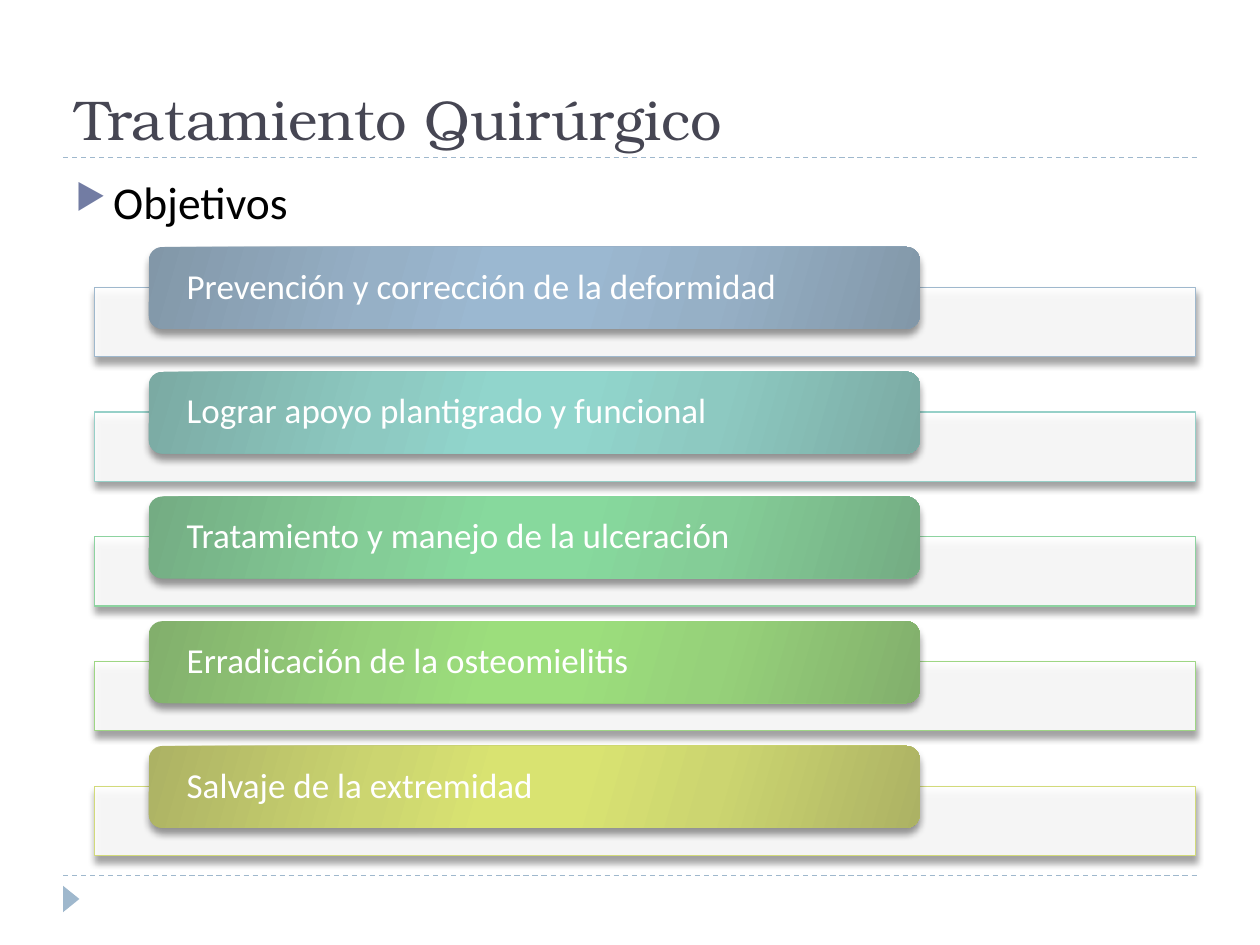
from lxml import etree
from pptx import Presentation
from pptx import util as u
from pptx.dml.color import RGBColor
from pptx.enum import dml, shapes, text
from pptx.oxml.ns import qn

# Content: goal, line colour, gradient edge, mid and core colours
TITLE = "Tratamiento Quirúrgico"
HEAD = "Objetivos"
GOALS = [
    ("Prevención y corrección de la deformidad", "9FB8CD", "8297A8", "96B0C6", "9BB8D1"),
    ("Lograr apoyo plantigrado y funcional", "96D0C8", "7BAAA3", "8DC9C1", "91D5CC"),
    ("Tratamiento y manejo de la ulceración", "8DD3A0", "74AC83", "84CD97", "87D99D"),
    ("Erradicación de la osteomielitis", "9ED684", "82AF6C", "96D17A", "9CDE7C"),
    ("Salvaje de la extremidad", "D2DA7A", "ACB264", "CCD570", "D9E371"),
]
THEME = {
    "serif": "TeX Gyre Bonum", "sans": "Calibri",
    "title": "464653", "body": "000000", "light": "FFFFFF",
    "accent": "9FB8CD", "bullet": "727CA3", "shadow": "000000",
    "title_size": 32, "head_size": 26, "goal_size": 20, "line": 0.75,
}
KIND = shapes.MSO_SHAPE
ANCHOR = text.MSO_ANCHOR


def rgb(color):
    return RGBColor.from_string(color)


def sub(node, tag, **attrs):
    return etree.SubElement(node, qn("a:" + tag), {k: str(v) for k, v in attrs.items()})


def add_run(para, words, font, size, color):
    run = para.add_run()
    run.text = words
    run.font.name = font
    run.font.size = u.Pt(size)
    run.font.color.rgb = rgb(color)


def add_box(slide, box, words, font, size, color, anchor):
    frame = slide.shapes.add_textbox(*map(u.Inches, box)).text_frame
    frame.word_wrap = True
    frame.vertical_anchor = anchor
    para = frame.paragraphs[0]
    add_run(para, words, font, size, color)
    return para


def add_form(slide, kind, box):
    form = slide.shapes.add_shape(kind, *map(u.Inches, box))
    form.shadow.inherit = False
    form.line.fill.background()
    return form


def add_rule(slide, y):
    rule = slide.shapes.add_connector(
        shapes.MSO_CONNECTOR.STRAIGHT,
        u.Inches(0.5), u.Inches(y), u.Inches(9.5), u.Inches(y))
    rule.line.color.rgb = rgb(THEME["accent"])
    rule.line.width = u.Pt(THEME["line"])
    rule.line.dash_style = dml.MSO_LINE.DASH
    sub(rule._element.spPr, "effectLst")


def add_shadow(form):
    effects = form._element.spPr.find(qn("a:effectLst"))
    shade = sub(effects, "outerShdw", blurRad=u.Pt(4), dist=u.Pt(3.4),
                dir=90 * 60000, rotWithShape=0)
    sub(sub(shade, "srgbClr", val=THEME["shadow"]), "alpha", val=40000)


def add_blend(form, edge, mid, core):
    form.fill.gradient()
    form.fill.gradient_angle = 360 - 16
    stops = form._element.spPr.find(".//" + qn("a:gsLst"))
    stops.clear()
    for pos, color in zip((0, 30, 45, 55, 73, 100), (edge, mid, core, core, mid, edge)):
        sub(sub(stops, "gs", pos=pos * 1000), "srgbClr", val=color)


def add_goal(slide, top, words, line, *blend):
    # Bar behind
    bar = add_form(slide, KIND.RECTANGLE, (0.75, top + 0.32, 8.74, 0.55))
    bar.fill.solid()
    bar.fill.fore_color.rgb = rgb(THEME["light"])
    sub(bar._element.spPr.find(".//" + qn("a:srgbClr")), "alpha", val=90000)
    bar.line.color.rgb = rgb(line)
    bar.line.width = u.Pt(THEME["line"])
    add_shadow(bar)
    # Label in front
    label = add_form(slide, KIND.ROUNDED_RECTANGLE, (1.18, top, 6.12, 0.65))
    add_blend(label, *blend)
    add_shadow(label)
    frame = label.text_frame
    frame.word_wrap = True
    frame.vertical_anchor = ANCHOR.MIDDLE
    frame.margin_left = frame.margin_right = u.Inches(0.27)
    frame.margin_top = frame.margin_bottom = 0
    para = frame.paragraphs[0]
    para.alignment = text.PP_ALIGN.LEFT
    para.line_spacing = 0.9
    add_run(para, words, THEME["sans"], THEME["goal_size"], THEME["light"])


def main():
    deck = Presentation()
    deck.slide_width, deck.slide_height = u.Inches(10), u.Inches(7.5)
    slide = deck.slides.add_slide(deck.slide_layouts[6])

    # Rules and corner mark
    for y in (6.95, 1.25):
        add_rule(slide, y)
    mark = add_form(slide, KIND.ISOSCELES_TRIANGLE, (0.46, 7.07, 0.21, 0.13))
    mark.rotation = 90
    mark.fill.solid()
    mark.fill.fore_color.rgb = rgb(THEME["accent"])

    # Title and bulleted heading
    add_box(slide, (0.5, 0.17, 9, 1.08), TITLE, THEME["serif"],
            THEME["title_size"], THEME["title"], ANCHOR.BOTTOM)
    head = add_box(slide, (0.5, 1.33, 9, 5.4), HEAD, THEME["sans"],
                   THEME["head_size"], THEME["body"], ANCHOR.TOP)
    head.space_before = u.Pt(6)
    props = head._p.get_or_add_pPr()
    props.set("marL", str(u.Inches(0.3)))
    props.set("indent", str(-u.Inches(0.3)))
    sub(sub(props, "buClr"), "srgbClr", val=THEME["bullet"])
    sub(props, "buSzPct", val=76000)
    sub(props, "buChar", char="▶")

    # Goals, evenly stacked
    for i, goal in enumerate(GOALS):
        add_goal(slide, 1.96 + i * 0.99, *goal)

    deck.save("out.pptx")


if __name__ == "__main__":
    main()
